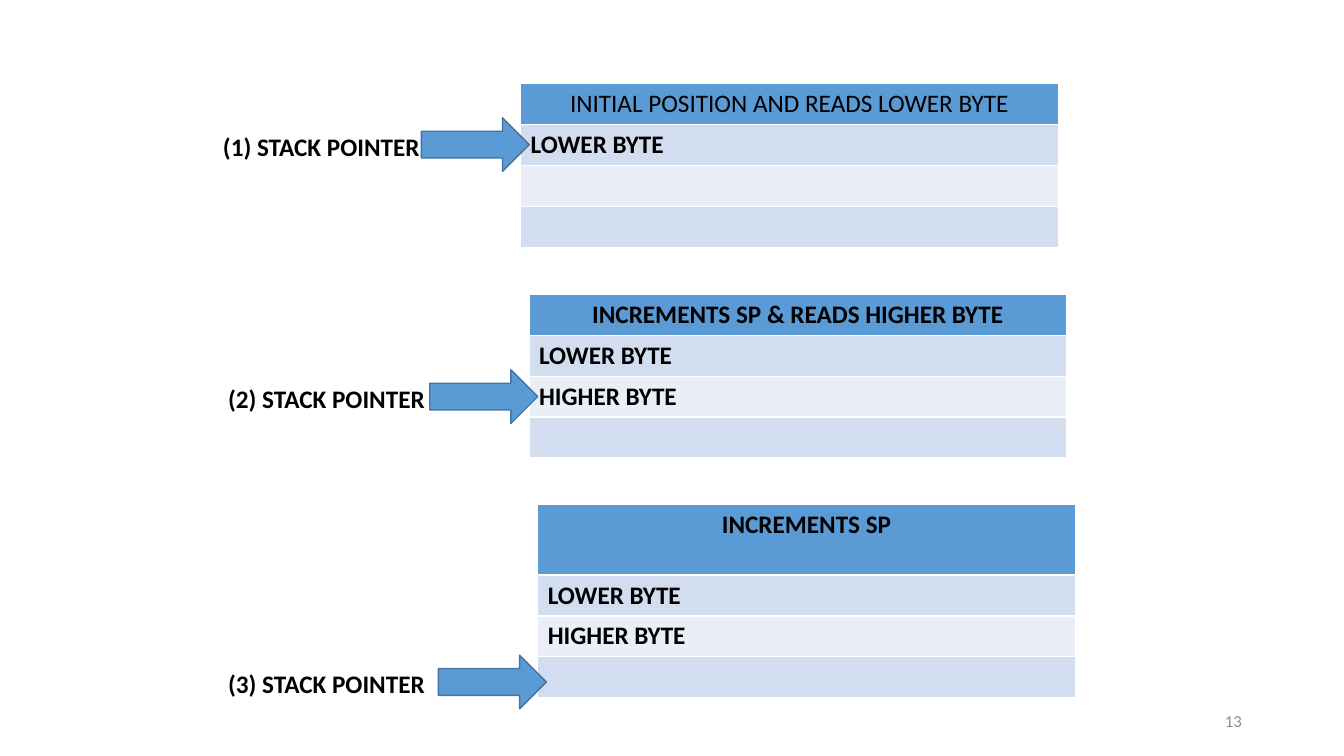
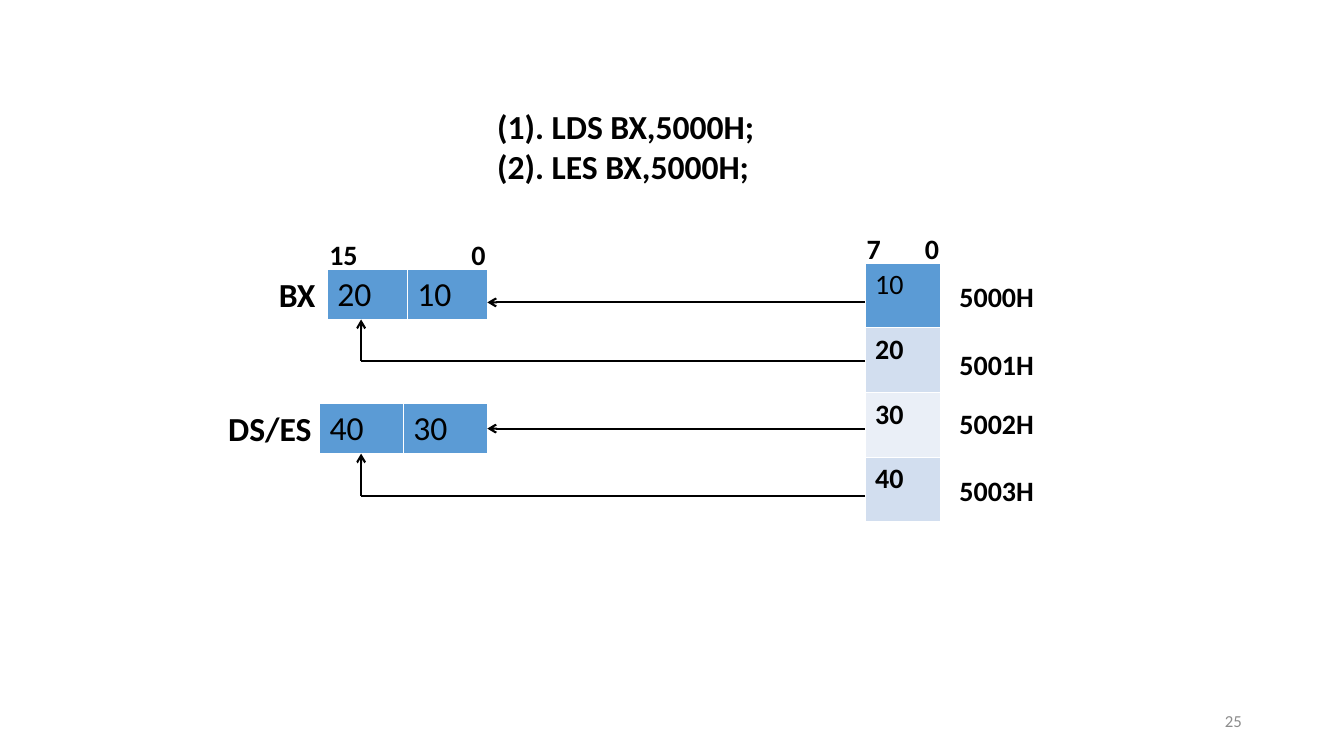
"""Build two slides on stack reads and pointer loads."""
from lxml.etree import SubElement
from pptx import Presentation
from pptx.dml.color import RGBColor as Rgb
from pptx.enum.shapes import MSO_CONNECTOR as Link, MSO_SHAPE as Shape
from pptx.enum.text import MSO_ANCHOR as Anchor, PP_ALIGN as Align
from pptx.oxml.ns import qn
from pptx.util import Cm, Pt

HUES = {
    "head": "5B9BD5",
    "band": "D2DEEF",
    "pale": "EAEFF7",
    "edge": "43739E",
    "ink": "000000",
    "page": "8C8C8C",
}
HUES = {name: Rgb.from_string(code) for name, code in HUES.items()}
FONT = "Calibri"


def write(frame, text, size, bold=True, hue="ink", align=Align.LEFT):
    frame.text = text
    frame.word_wrap = True
    for para in frame.paragraphs:
        para.alignment = align
        font = para.font
        font.name, font.size, font.bold = FONT, Pt(size), bold
        font.color.rgb = HUES[hue]


def grid(slide, rows, left, top, width, tall, size, bold=False, align=Align.LEFT):
    cols = len(rows[0])
    table = slide.shapes.add_table(
        len(rows), cols, Cm(left), Cm(top), Cm(width), Cm(sum(tall))
    ).table
    for r, row in enumerate(rows):
        table.rows[r].height = Cm(tall[r])
        fill = "head" if r == 0 else "band" if r % 2 else "pale"
        for c, text in enumerate(row):
            cell = table.cell(r, c)
            cell.fill.solid()
            cell.fill.fore_color.rgb = HUES[fill]
            side = Align.LEFT if r else align
            write(cell.text_frame, text, size, bold or r > 0, align=side)


deck = Presentation()
deck.slide_width, deck.slide_height = Cm(33.87), Cm(19.05)
blank = deck.slide_layouts[6]
stack, loads = [deck.slides.add_slide(blank) for _ in range(2)]

for slide, num in ((stack, "13"), (loads, "25")):
    box = slide.shapes.add_textbox(Cm(23.93), Cm(17.65), Cm(7.62), Cm(1.02))
    box.text_frame.vertical_anchor = Anchor.MIDDLE
    write(box.text_frame, num, 12, False, "page", Align.RIGHT)

ROW = 1.03
STEPS = (
    ("INITIAL POSITION AND READS LOWER BYTE", ("LOWER BYTE", "", ""),
     False, 13.12, 2.11, ROW, 5.37, 2.97),
    ("INCREMENTS SP & READS HIGHER BYTE", ("LOWER BYTE", "HIGHER BYTE", ""),
     True, 13.33, 7.42, ROW, 5.5, 9.32),
    ("INCREMENTS SP", ("LOWER BYTE", "HIGHER BYTE", ""),
     True, 13.55, 12.7, 1.79, 5.5, 16.51),
)
for num, step in enumerate(STEPS, 1):
    head, cells, bold, left, top, tall, start, mark = step
    rows = [[head]] + [[text] for text in cells]
    grid(stack, rows, left, top, 13.55, [tall] + [ROW] * 3, 18, bold, Align.CENTER)
    box = stack.shapes.add_textbox(Cm(start), Cm(mark + 0.21), Cm(5.7), Cm(1.03))
    write(box.text_frame, f"({num}) STACK POINTER", 18)
    arrow = stack.shapes.add_shape(
        Shape.RIGHT_ARROW, Cm(left - 2.5), Cm(mark), Cm(2.72), Cm(1.35)
    )
    arrow.shadow.inherit = False
    arrow.fill.solid()
    arrow.fill.fore_color.rgb = HUES["head"]
    arrow.line.color.rgb = HUES["edge"]
    arrow.line.width = Pt(1)

BANK = 21.8
EDGE = 12.28
BEND = 9.1
grid(loads, [["10"], ["20"], ["30"], ["40"]], BANK, 6.63, 1.9, [1.63] * 4, 20)

REGS = (
    (["20", "10"], 8.25, 6.78, 7.62, 9.1),
    (["40", "30"], 8.05, 10.16, 10.8, 12.49),
)
for pair, left, top, low, high in REGS:
    grid(loads, [pair], left, top, EDGE - left, [1.27], 24)
    wires = (
        (BANK, low, EDGE, low, True),
        (BANK, high, BEND, high, False),
        (BEND, high, BEND, top + 1.27, True),
    )
    for *ends, tip in wires:
        wire = loads.shapes.add_connector(Link.STRAIGHT, *map(Cm, ends))
        wire.line.color.rgb = HUES["ink"]
        wire.line.width = Pt(1.5)
        props = wire._element.spPr
        if tip:
            SubElement(props.find(qn("a:ln")), qn("a:tailEnd"), type="arrow")
        SubElement(props, qn("a:effectLst"))

LABELS = [
    ("(1). LDS BX,5000H;\n(2). LES BX,5000H;", 12.28, 2.54, 12.7, 24),
    ("BX", 6.78, 6.78, 3.18, 24),
    ("DS/ES", 5.5, 10.16, 3.18, 24),
    ("15", 8.05, 5.87, 1.48, 20),
    ("0", 11.63, 5.87, 1.07, 20),
    ("7", 21.59, 5.7, 1.7, 20),
    ("0", 23.06, 5.7, 1.07, 20),
]
LABELS += [
    (f"500{i}H", 23.93, top, 3.18, 20)
    for i, top in enumerate((6.93, 8.64, 10.11, 11.81))
]
for text, left, top, width, size in LABELS:
    tall = 0.055 * size * (text.count("\n") + 1)
    box = loads.shapes.add_textbox(Cm(left), Cm(top), Cm(width), Cm(tall))
    write(box.text_frame, text, size)

deck.save("out.pptx")
